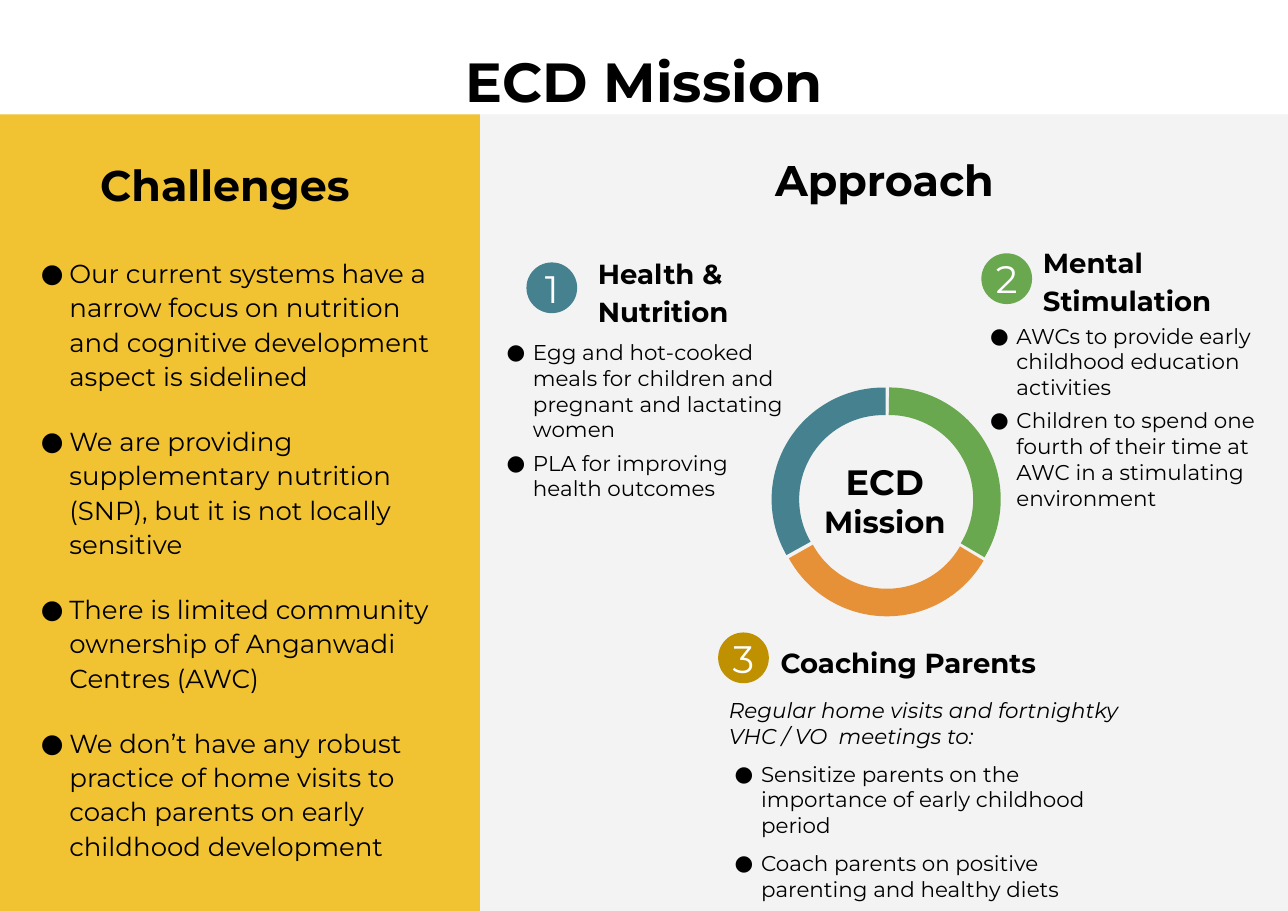
from dataclasses import dataclass
from typing import Optional

from lxml.etree import SubElement
from pptx import Presentation
from pptx.dml.color import RGBColor
from pptx.enum.shapes import MSO_SHAPE as Shape
from pptx.enum.text import MSO_ANCHOR as Anchor, MSO_AUTO_SIZE as AutoSize, PP_ALIGN as Align
from pptx.oxml.ns import qn
from pptx.util import Cm, Pt

FONT = "Montserrat"
COLORS = {
    "black": "000000", "white": "FFFFFF", "grey": "F3F3F3", "yellow": "F1C232",
    "teal": "45818E", "green": "6AA84F", "orange": "E69138", "gold": "BF9000",
}
BADGE_SIZE = 1.17
RING_SIZE = 4.52


@dataclass
class Line:
    text: str
    size: float
    bold: bool = False
    italic: bool = False
    color: str = "black"
    align: Align = Align.LEFT
    spacing: float = 1.0
    before: float = 0
    after: float = 0
    hanging: float = 0


@dataclass
class Block:
    box: tuple[float, float, float, float]
    lines: list[Line]
    placeholder: Optional[int] = None
    inset: float = 0.25


@dataclass
class Panel:
    box: tuple[float, float, float, float]
    color: str


@dataclass
class Badge:
    number: str
    left: float
    top: float
    color: str


@dataclass
class Arc:
    left: float
    top: float
    rotation: float
    color: str


def rgb(name: str) -> RGBColor:
    return RGBColor.from_string(COLORS[name])


def set_bullet(p, hanging: float) -> None:
    pPr = p._p.get_or_add_pPr()
    pPr.set("marL", str(Cm(0.74) if hanging else 0))
    pPr.set("indent", str(-Cm(hanging)))
    if not hanging:
        SubElement(pPr, qn("a:buNone"))
        return
    color = SubElement(pPr, qn("a:buClr"))
    SubElement(color, qn("a:srgbClr"), val=COLORS["black"])
    SubElement(pPr, qn("a:buFont"), typeface=FONT)
    SubElement(pPr, qn("a:buChar"), char="●")


def write(tf, lines: list[Line], inset: float, anchor: Anchor = Anchor.TOP) -> None:
    tf.word_wrap = True
    tf.auto_size = AutoSize.NONE
    tf.vertical_anchor = anchor
    tf.margin_left = tf.margin_right = tf.margin_top = tf.margin_bottom = Cm(inset)
    tf.text = "\n".join(line.text for line in lines)
    for p, line in zip(tf.paragraphs, lines):
        p.alignment = line.align
        p.line_spacing = line.spacing
        p.space_before, p.space_after = Pt(line.before), Pt(line.after)
        set_bullet(p, line.hanging)
        for r in p.runs:
            r.font.name, r.font.size = FONT, Pt(line.size)
            r.font.bold, r.font.italic = line.bold, line.italic
            r.font.color.rgb = rgb(line.color)


def draw_block(s, block: Block) -> None:
    box = [Cm(v) for v in block.box]
    if block.placeholder is None:
        sp = s.shapes.add_textbox(*box)
    else:
        sp = s.placeholders[block.placeholder]
        sp.left, sp.top, sp.width, sp.height = box
    write(sp.text_frame, block.lines, block.inset)


def draw_filled(s, kind: Shape, box: tuple[float, float, float, float], color: str):
    sp = s.shapes.add_shape(kind, *[Cm(v) for v in box])
    sp.shadow.inherit = False
    sp.fill.solid()
    sp.fill.fore_color.rgb = rgb(color)
    sp.line.fill.background()
    return sp


def draw_panel(s, panel: Panel, layer: int) -> None:
    sp = draw_filled(s, Shape.RECTANGLE, panel.box, panel.color)
    sp.element.getparent().insert(2 + layer, sp.element)


def draw_badge(s, badge: Badge) -> None:
    box = (badge.left, badge.top, BADGE_SIZE, BADGE_SIZE)
    sp = draw_filled(s, Shape.OVAL, box, badge.color)
    number = Line(badge.number, 25, color="white", align=Align.CENTER)
    write(sp.text_frame, [number], 0, Anchor.MIDDLE)


def draw_arc(s, arc: Arc) -> None:
    sp = s.shapes.add_shape(Shape.ARC, Cm(arc.left), Cm(arc.top), Cm(RING_SIZE), Cm(RING_SIZE))
    sp.adjustments[0], sp.adjustments[1] = 162, 18.81
    sp.rotation = arc.rotation
    sp.shadow.inherit = False
    sp.fill.background()
    sp.line.color.rgb = rgb(arc.color)
    sp.line.width = Pt(18)


def section(text: str) -> Line:
    return Line(text, 28, bold=True, align=Align.CENTER, spacing=1.15, after=20)


def heading(text: str) -> Line:
    return Line(text, 18, bold=True, spacing=1.15)


def challenge(text: str, before: float = 20, after: float = 0) -> Line:
    return Line(text, 17, spacing=1.1, before=before, after=after, hanging=0.66)


def action(text: str, before: float = 0, after: float = 0) -> Line:
    return Line(text, 14, before=before, after=after, hanging=0.61)


PANELS = [
    Panel((11.02, 2.64, 18.68, 18.36), "grey"),
    Panel((0, 2.64, 11.07, 18.36), "yellow"),
]
ARCS = [
    Arc(18.24, 9.25, 0, "green"),
    Arc(18.19, 9.37, 120, "orange"),
    Arc(18.11, 9.25, 240, "teal"),
]
BADGES = [
    Badge("1", 12.14, 6.05, "teal"),
    Badge("2", 22.63, 5.84, "green"),
    Badge("3", 16.56, 14.58, "gold"),
]
BLOCKS = [
    Block((9.42, 0.51, 10.85, 1.78),
          [Line("ECD Mission", 36, bold=True, align=Align.CENTER, spacing=1.3)], 0, 0.13),
    Block((1.02, 3.23, 8.33, 1.7), [section("Challenges")], 1),
    Block((0.61, 5.61, 10.06, 14.58), [
        challenge("Our current systems have a narrow focus on nutrition and cognitive "
                  "development aspect is sidelined", before=0),
        challenge("We are providing supplementary nutrition (SNP), but it is not locally sensitive"),
        challenge("There is limited community ownership of Anganwadi Centres (AWC)"),
        challenge("We don’t have any robust practice of home visits to coach parents on early "
                  "childhood development", after=20),
    ], 2),
    Block((16.23, 3.12, 8.33, 1.7), [section("Approach")], 3),
    Block((13.54, 5.56, 6.48, 2.16), [heading("Health & Nutrition")]),
    Block((11.3, 7.57, 7.16, 4.29), [
        action("Egg and hot-cooked meals for children and pregnant and lactating women"),
        action("PLA for improving health outcomes", 5, 5),
    ], 4),
    Block((23.8, 5.31, 5.8, 2.16), [heading("Mental Stimulation")]),
    Block((22.45, 7.19, 7.25, 4.88), [
        action("AWCs to provide early childhood education activities"),
        action("Children to spend one fourth of their time at AWC in a stimulating environment", 5, 5),
    ]),
    Block((17.75, 14.53, 6.48, 1.27), [heading("Coaching Parents")]),
    Block((16.56, 15.82, 10.06, 5.18), [
        Line("Regular home visits and fortnightky VHC / VO  meetings to:", 14, italic=True),
        action("Sensitize parents on the importance of early childhood period", 8),
        action("Coach parents on positive parenting and healthy diets", 8, 8),
    ]),
    Block((18.26, 10.36, 4.29, 2.36), [
        Line("ECD", 23, bold=True, align=Align.CENTER),
        Line("Mission", 20, bold=True, align=Align.CENTER),
    ]),
]


def main() -> None:
    prs = Presentation()
    prs.slide_width, prs.slide_height = Cm(29.7), Cm(21)
    s = prs.slides.add_slide(prs.slide_layouts.get_by_name("Comparison"))
    for layer, panel in enumerate(PANELS):
        draw_panel(s, panel, layer)
    for arc in ARCS:
        draw_arc(s, arc)
    for block in BLOCKS:
        draw_block(s, block)
    for badge in BADGES:
        draw_badge(s, badge)
    prs.save("out.pptx")


if __name__ == "__main__":
    main()
